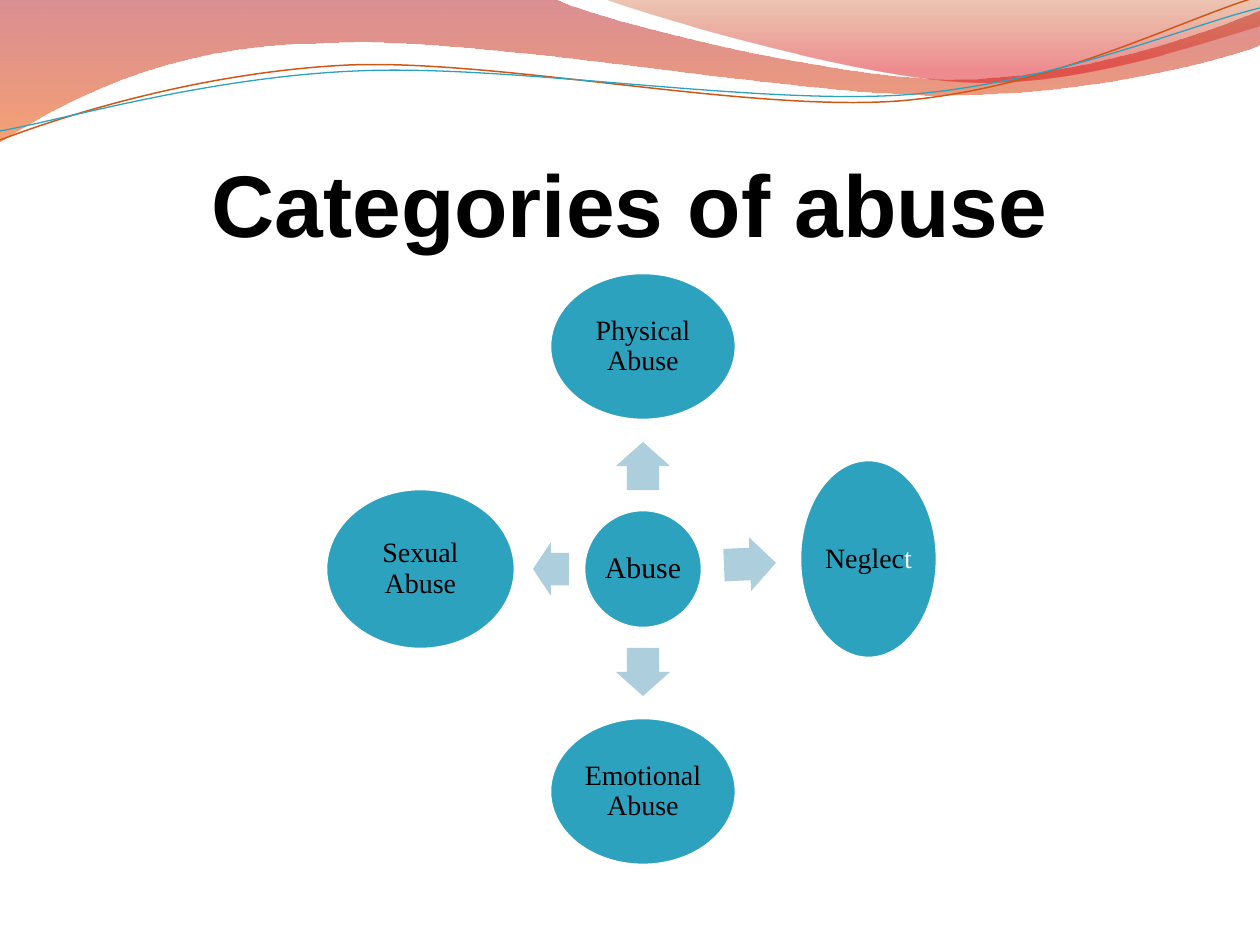
from lxml.etree import SubElement
from pptx import Presentation
from pptx.dml.color import RGBColor
from pptx.enum.shapes import MSO_SHAPE
from pptx.enum.text import MSO_ANCHOR, MSO_AUTO_SIZE, PP_ALIGN
from pptx.oxml.ns import qn
from pptx.oxml.xmlchemy import OxmlElement
from pptx.util import Pt

PX = 914400 / 126
BLACK = RGBColor(0x00, 0x00, 0x00)
WHITE = RGBColor(0xFF, 0xFF, 0xFF)
TEAL = RGBColor(0x2D, 0xA2, 0xBF)
PALE = RGBColor(0xAD, 0xCE, 0xDC)
RUST = RGBColor(0xCF, 0x58, 0x18)
CRIMSON = RGBColor(0xAF, 0x09, 0x11)
ORANGE = RGBColor(0xEE, 0x53, 0x00)
BROWN = RGBColor(0xC2, 0x44, 0x00)
RED = RGBColor(0xDC, 0x00, 0x0B)

# A step of two numbers is a line; a step of six is a Bezier curve.
BAND = [(-1, -1), (554, -1), (600, 21, 837, 79, 955, 79),
        (1075, 79, 1207, 33, 1260, 11), (1261, 45),
        (1239, 55, 1096, 96, 940, 95), (784, 95, 481, 35, 324, 43),
        (163, 44, 58, 105, -1, 142)]
CREST = [(604, -1), (641, 14, 859, 78, 969, 82),
         (1079, 87, 1211, 40, 1260, 26), (1260, 0)]
RUST_WAVE = [(0, 140), (60, 117, 199, 72, 349, 65),
             (498, 59, 747, 112, 898, 101), (1050, 89, 1182, 19, 1257, -3)]
TEAL_WAVE = [(0, 131), (59, 121, 207, 77, 357, 71),
             (508, 64, 752, 105, 903, 95), (1053, 84, 1186, 26, 1260, 8)]

# Label, ellipse box, arrow box, arrow turn
KINDS = [
    ("Physical Abuse", (550, 273, 186, 147), (619, 439, 48, 54), 270),
    ("Neglect", (800, 460, 137, 198), (724, 537, 52, 54), 357.5),
    ("Emotional Abuse", (550, 718, 186, 147), (619, 645, 48, 54), 90),
    ("Sexual Abuse", (326, 489, 189, 160), (533, 542, 36, 54), 180),
]


def emu(*sizes):
    return [round(size * PX) for size in sizes]


def add_path(slide, steps, close):
    """Add an outline, then join each curve's three points into one Bezier."""
    points = [emu(*step[i:i + 2]) for step in steps
              for i in range(0, len(step), 2)]
    pen = slide.shapes.build_freeform(*points[0])
    pen.add_line_segments(points[1:], close=close)
    shape = pen.convert_to_shape()
    shape.shadow.inherit = False
    lines = iter(list(shape.element.iter(qn("a:lnTo"))))
    for step in steps[1:]:
        trio = [next(lines) for _ in range(len(step) // 2)]
        if len(trio) == 3:
            curve = OxmlElement("a:cubicBezTo")
            trio[0].addprevious(curve)
            for line in trio:
                curve.append(line[0])
                line.getparent().remove(line)
    return shape


def add_sweep(slide, steps, stops):
    """Add a closed outline with a see-through gradient from top to bottom."""
    shape = add_path(slide, steps, True)
    shape.line.fill.background()
    shape.fill.gradient()
    shape.fill.gradient_angle = 270
    for stop, (place, color, alpha) in zip(shape.fill.gradient_stops, stops):
        stop.position = place
        stop.color.rgb = color
    tags = list(shape.element.spPr.iter(qn("a:srgbClr")))
    for tag, (place, color, alpha) in zip(tags, stops):
        SubElement(tag, qn("a:alpha"), val=str(alpha * 1000))


def add_wave(slide, steps, color, width):
    shape = add_path(slide, steps, False)
    shape.fill.background()
    shape.line.color.rgb = color
    shape.line.width = Pt(width)


def set_title(slide, text):
    title = slide.shapes.title
    title.left, title.top, title.width, title.height = emu(63, 97, 1134, 158)
    frame = title.text_frame
    frame.text = text
    frame.auto_size = MSO_AUTO_SIZE.NONE
    frame.vertical_anchor = MSO_ANCHOR.BOTTOM
    frame.margin_left = frame.margin_right = frame.margin_bottom = 0
    frame.margin_top = emu(6)[0]
    line = frame.paragraphs[0]
    line.alignment = PP_ALIGN.CENTER
    font = line.runs[0].font
    font.name, font.size, font.bold = "Arial", Pt(50), True
    font.color.rgb = BLACK


def add_disc(slide, text, box, size):
    disc = slide.shapes.add_shape(MSO_SHAPE.OVAL, *emu(*box))
    disc.shadow.inherit = False
    disc.fill.solid()
    disc.fill.fore_color.rgb = TEAL
    disc.line.color.rgb = WHITE
    disc.line.width = Pt(1.5)
    frame = disc.text_frame
    frame.word_wrap = True
    frame.vertical_anchor = MSO_ANCHOR.MIDDLE
    frame.margin_left = frame.margin_right = emu(2)[0]
    frame.margin_top = frame.margin_bottom = emu(2)[0]
    frame.text = text
    line = frame.paragraphs[0]
    line.alignment = PP_ALIGN.CENTER
    line.line_spacing = 0.9
    if text == "Neglect":
        line.runs[0].text = text[:-1]
        line.add_run().text = text[-1]
    for run, color in zip(line.runs, (BLACK, WHITE)):
        run.font.name, run.font.size = "Times New Roman", Pt(size)
        run.font.color.rgb = color


def add_arrow(slide, box, turn):
    arrow = slide.shapes.add_shape(MSO_SHAPE.RIGHT_ARROW, *emu(*box))
    arrow.shadow.inherit = False
    arrow.adjustments[0] = 0.6
    arrow.adjustments[1] = 0.5
    arrow.rotation = turn
    arrow.fill.solid()
    arrow.fill.fore_color.rgb = PALE
    arrow.line.fill.background()


def main():
    deck = Presentation()
    deck.slide_width, deck.slide_height = emu(1260, 945)
    slide = deck.slides.add_slide(deck.slide_layouts[5])
    add_sweep(slide, BAND, [(0, CRIMSON, 45), (1, ORANGE, 55)])
    add_sweep(slide, CREST, [(0, BROWN, 30), (0.8, RED, 45)])
    add_wave(slide, RUST_WAVE, RUST, 0.85)
    add_wave(slide, TEAL_WAVE, TEAL, 0.75)
    set_title(slide, "Categories of abuse")
    add_disc(slide, "Abuse", (584, 510, 118, 118), 17)
    for label, box, arrow, turn in KINDS:
        add_arrow(slide, arrow, turn)
        add_disc(slide, label, box, 16)
    deck.save("out.pptx")


if __name__ == "__main__":
    main()
